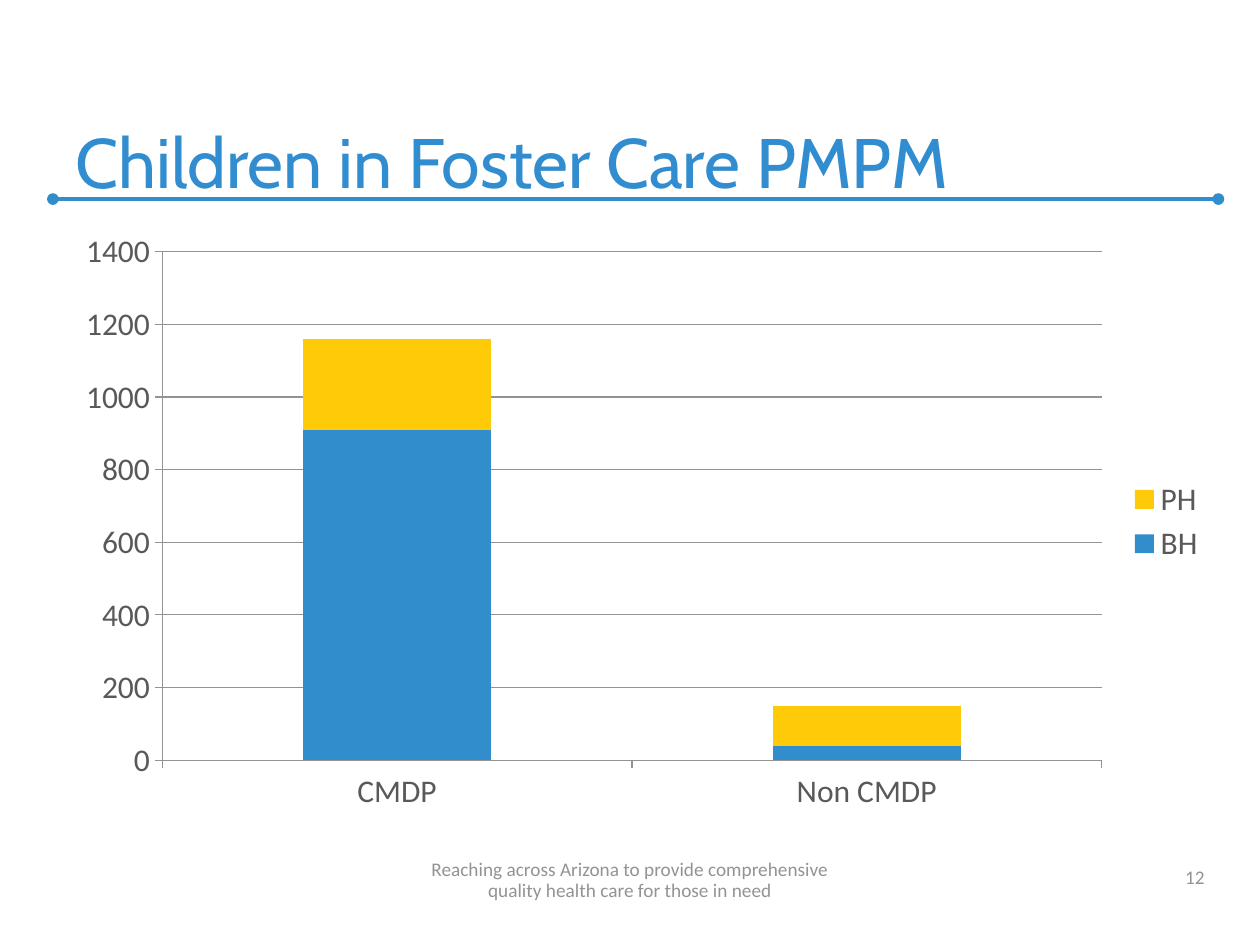
"""Build the slide on monthly cost per member for children in foster care."""
import pptx
import pptx.chart.data
import pptx.dml.color
import pptx.enum.chart
import pptx.enum.shapes
import pptx.enum.text
import pptx.oxml
import pptx.oxml.ns
import pptx.util
from pptx.util import Inches

TITLE_BLUE = pptx.dml.color.RGBColor(0x31, 0x8D, 0xCF)
BLUE = pptx.dml.color.RGBColor(0x31, 0x8D, 0xCC)
YELLOW = pptx.dml.color.RGBColor(0xFF, 0xCB, 0x08)
DARK_GRAY = pptx.dml.color.RGBColor(0x59, 0x59, 0x59)
GRAY = pptx.dml.color.RGBColor(0x93, 0x93, 0x93)
ALIGN = pptx.enum.text.PP_ALIGN


def format_font(font, name="Calibri", size=11, color=GRAY):
    font.name = name
    font.size = pptx.util.Pt(size)
    font.color.rgb = color


def write_text(frame, text, align=ALIGN.LEFT, line_spacing=None, **font_format):
    frame.word_wrap = True
    frame.auto_size = pptx.enum.text.MSO_AUTO_SIZE.NONE
    frame.vertical_anchor = pptx.enum.text.MSO_ANCHOR.BOTTOM
    paragraph = frame.paragraphs[0]
    paragraph.alignment = align
    if line_spacing:
        paragraph.line_spacing = pptx.util.Pt(line_spacing)
    for index, line in enumerate(text.split("\n")):
        if index:
            paragraph.add_line_break()
        run = paragraph.add_run()
        run.text = line
        format_font(run.font, **font_format)


class SlideBuilder:
    def __init__(self, slide):
        self.slide = slide
        self.line_color = GRAY

    def add_title(self, text, left, top, width, height):
        title = self.slide.shapes.title
        title.left, title.top = Inches(left), Inches(top)
        title.width, title.height = Inches(width), Inches(height)
        write_text(title.text_frame, text, name="Cabin", size=40, color=TITLE_BLUE)

    def add_text(self, text, left, top, width, height, **text_format):
        box = self.slide.shapes.add_textbox(
            Inches(left), Inches(top), Inches(width), Inches(height))
        write_text(box.text_frame, text, **text_format)

    def add_rule(self, left, right, top):
        rule = self.slide.shapes.add_connector(
            pptx.enum.shapes.MSO_CONNECTOR.STRAIGHT,
            Inches(left), Inches(top), Inches(right), Inches(top))
        rule.line.color.rgb = BLUE
        rule.line.width = pptx.util.Pt(2.25)
        line = rule.line._get_or_add_ln()
        for end in ("a:headEnd", "a:tailEnd"):
            pptx.oxml.ns.qn(end)
            element = pptx.oxml.parse_xml(
                f'<{end} {pptx.oxml.ns.nsdecls("a")} type="oval"/>')
            line.append(element)
        rule._element.spPr.append(pptx.oxml.parse_xml(
            f'<a:effectLst {pptx.oxml.ns.nsdecls("a")}/>'))

    def format_line(self, line):
        line.color.rgb = self.line_color
        line.width = pptx.util.Pt(0.75)

    def add_stacked_chart(self, categories, series_rows, left, top, width, height):
        data = pptx.chart.data.CategoryChartData()
        data.categories = categories
        for name, values, _ in series_rows:
            data.add_series(name, values)
        chart = self.slide.shapes.add_chart(
            pptx.enum.chart.XL_CHART_TYPE.COLUMN_STACKED,
            Inches(left), Inches(top), Inches(width), Inches(height), data).chart
        format_font(chart.font, size=18, color=DARK_GRAY)
        chart.has_title = False
        chart.has_legend = True
        chart.legend.position = pptx.enum.chart.XL_LEGEND_POSITION.RIGHT
        chart.legend.include_in_layout = False
        plot = chart.plots[0]
        plot.gap_width, plot.overlap = 150, 100
        plot.vary_by_categories = False
        for series, (_, _, color) in zip(plot.series, series_rows):
            series.format.fill.solid()
            series.format.fill.fore_color.rgb = color
        for axis in (chart.category_axis, chart.value_axis):
            axis.major_tick_mark = pptx.enum.chart.XL_TICK_MARK.OUTSIDE
            axis.minor_tick_mark = pptx.enum.chart.XL_TICK_MARK.NONE
            self.format_line(axis.format.line)
        chart.value_axis.minimum_scale = 0
        chart.value_axis.maximum_scale = 1400
        chart.value_axis.major_unit = 200
        chart.value_axis.has_major_gridlines = True
        self.format_line(chart.value_axis.major_gridlines.format.line)


def main():
    presentation = pptx.Presentation()
    presentation.slide_width, presentation.slide_height = Inches(10), Inches(7.5)
    builder = SlideBuilder(presentation.slides.add_slide(presentation.slide_layouts[5]))
    builder.add_rule(0.42, 9.67, 1.58)
    builder.add_title("Children in Foster Care PMPM", 0.5, 0.33, 9.08, 1.33)
    builder.add_stacked_chart(
        ["CMDP", "Non CMDP"],
        [("BH", (910, 40), BLUE), ("PH", (250, 110), YELLOW)],
        0.5, 1.75, 9.17, 4.78)
    builder.add_text("12", 7.33, 6.78, 2.33, 0.32, align=ALIGN.RIGHT)
    builder.add_text(
        "Reaching across Arizona to provide comprehensive\n"
        "quality health care for those in need",
        0, 6.78, 10, 0.42, align=ALIGN.CENTER, line_spacing=12)
    presentation.save("out.pptx")


if __name__ == "__main__":
    main()
